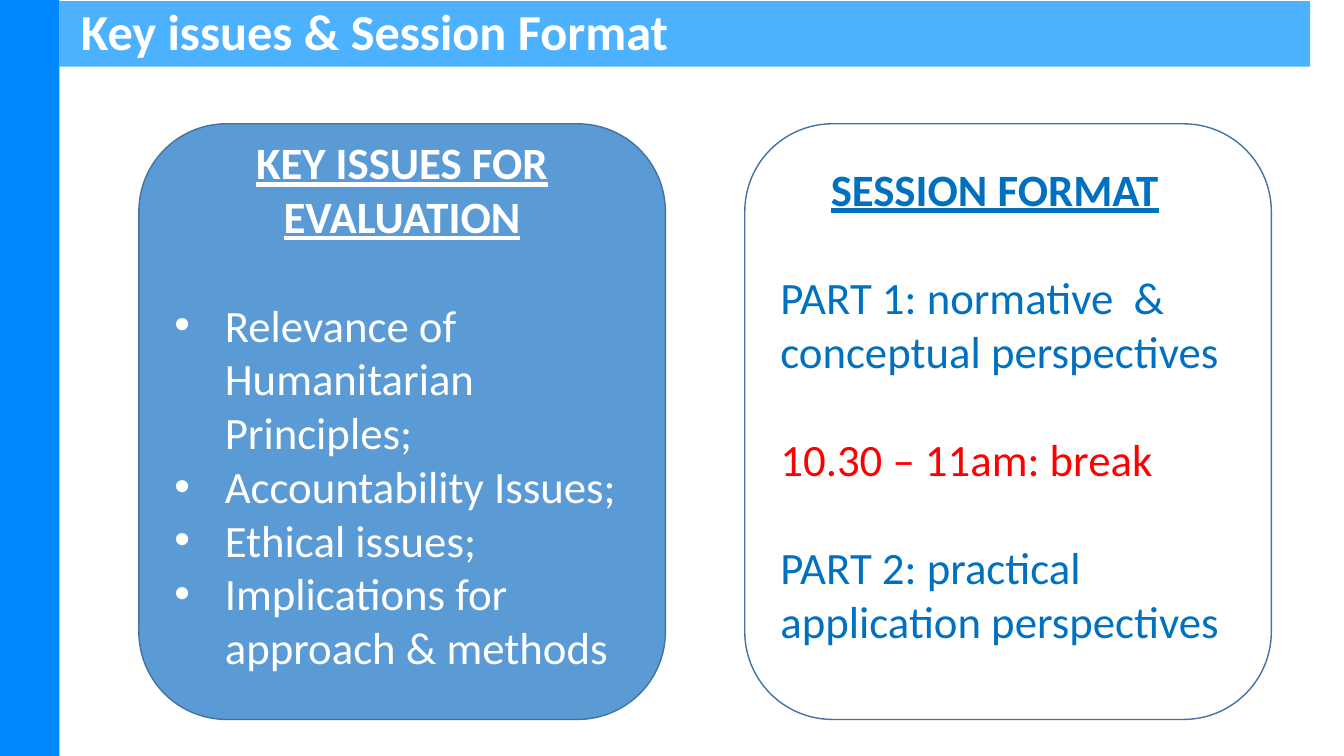
"""Build the slide on key issues for evaluation and the session format."""
import pptx
import pptx.dml.color
import pptx.enum.shapes
import pptx.enum.text
import pptx.oxml.ns
import pptx.util
from lxml import etree
from pptx.util import Cm, Pt

SHAPES = pptx.enum.shapes.MSO_SHAPE
ALIGN = pptx.enum.text.PP_ALIGN
WHITE, BLUE, RED = "FFFFFF", "0070C0", "FF0000"
BLANK_LINE = Pt(39)


def colour(hex_string):
    return pptx.dml.color.RGBColor.from_string(hex_string)


def add_box(preset, left, top, width, height, fill=None, line=None):
    shape = slide.shapes.add_shape(preset, Cm(left), Cm(top), Cm(width), Cm(height))
    shape.shadow.inherit = False
    if fill:
        shape.fill.solid()
        shape.fill.fore_color.rgb = colour(fill)
    else:
        shape.fill.background()
    if line:
        shape.line.color.rgb = colour(line)
        shape.line.width = Pt(1)
    else:
        shape.line.fill.background()
    shape.text_frame.word_wrap = True
    shape.text_frame.vertical_anchor = pptx.enum.text.MSO_ANCHOR.MIDDLE
    return shape


presentation = pptx.Presentation()
presentation.slide_width, presentation.slide_height = Cm(33.87), Cm(19.05)
slide = presentation.slides.add_slide(presentation.slide_layouts[6])

add_box(SHAPES.RECTANGLE, 0, 0, 1.5, 19.05, fill="0088FF")

title_bar = add_box(SHAPES.RECTANGLE, 1.5, 0.03, 31.52, 1.65, fill="0091FF")
bar_colour = title_bar.fill._xPr.find(".//" + pptx.oxml.ns.qn("a:srgbClr"))
etree.SubElement(bar_colour, pptx.oxml.ns.qn("a:alpha"), val="70000")
title_bar.text_frame.margin_left = Cm(0.54)
title = title_bar.text_frame.paragraphs[0]
title.text = "Key issues & Session Format"
title.alignment = ALIGN.LEFT
title.line_spacing = 0.9
title_font = title.runs[0].font
title_font.name, title_font.size, title_font.bold = "Calibri", Pt(36), True
title_font.color.rgb = colour(WHITE)

panels = [
    (3.5, "5B9BD5", WHITE, "KEY ISSUES FOR EVALUATION", True, [
        ("Relevance of Humanitarian Principles;", WHITE),
        ("Accountability Issues;", WHITE),
        ("Ethical issues;", WHITE),
        ("Implications for approach & methods", WHITE),
    ]),
    (18.77, None, BLUE, "SESSION FORMAT", False, [
        ("PART 1: normative  & conceptual perspectives", BLUE),
        ("10.30 – 11am: break", RED),
        ("PART 2: practical application perspectives", BLUE),
    ]),
]

for left, fill, heading_colour, heading, bulleted, entries in panels:
    panel = add_box(SHAPES.ROUNDED_RECTANGLE, left, 3.12, 13.27, 15.01, fill, "43739E")
    frame = panel.text_frame
    frame.margin_bottom = Cm(0.99)
    for index, (text, text_colour) in enumerate([(heading, heading_colour)] + entries):
        paragraph = frame.add_paragraph() if index else frame.paragraphs[0]
        paragraph.text = text
        paragraph.alignment = ALIGN.LEFT
        properties = paragraph._p.get_or_add_pPr()
        font = paragraph.runs[0].font
        font.name, font.size = "Calibri", Pt(32)
        font.color.rgb = colour(text_colour)
        font.bold = font.underline = index == 0
        if index == 0 and bulleted:
            paragraph.alignment = ALIGN.CENTER
        elif index == 0:
            properties.set("marL", str(Cm(1.27)))
        elif bulleted:
            properties.set("marL", str(Cm(1.27)))
            properties.set("indent", str(-Cm(1.27)))
        if index == 1 or index > 1 and not bulleted:
            paragraph.space_before = BLANK_LINE
        if index and bulleted:
            etree.SubElement(properties, pptx.oxml.ns.qn("a:buFont"), typeface="Arial")
            etree.SubElement(properties, pptx.oxml.ns.qn("a:buChar"), char="•")

presentation.save("out.pptx")
